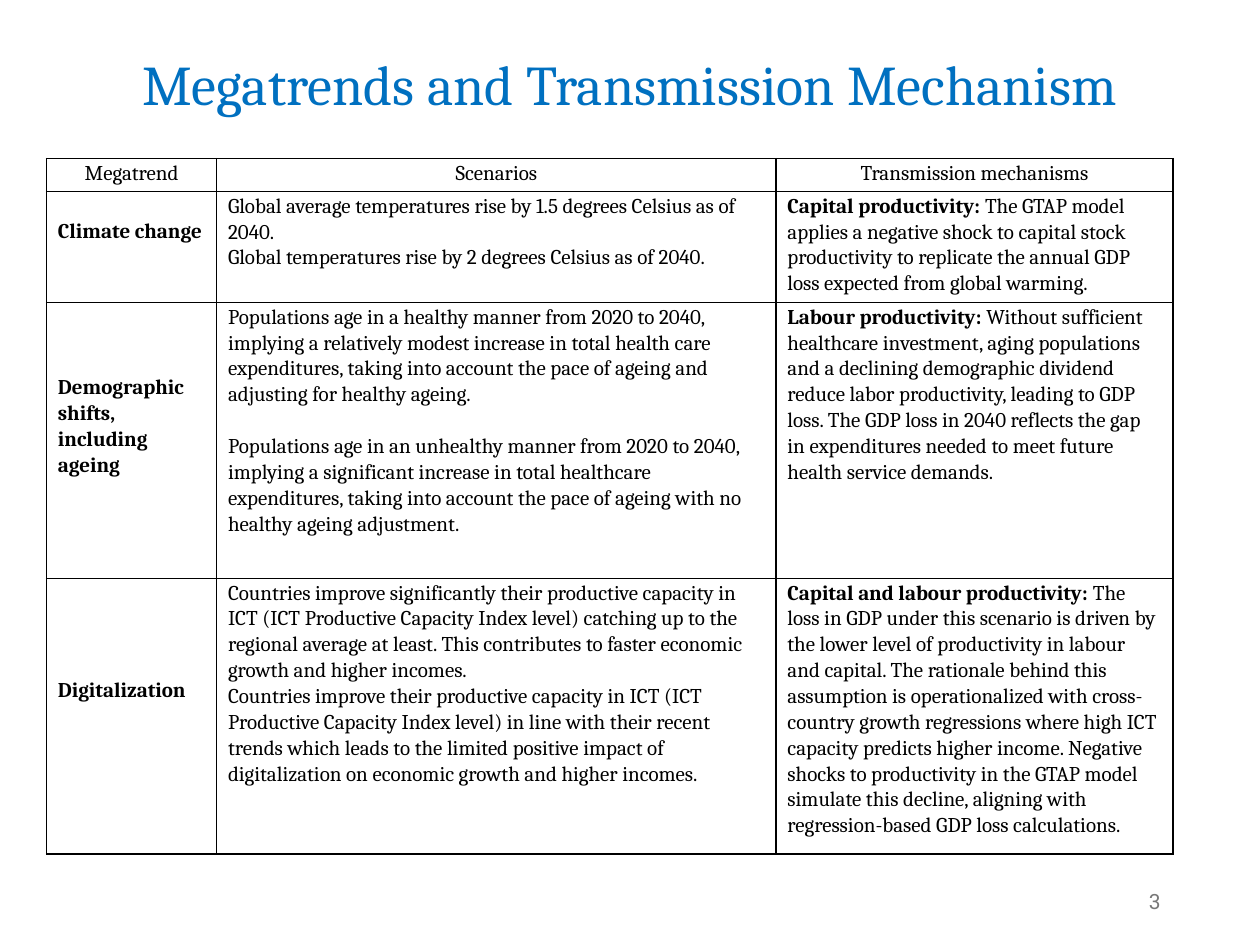
import pptx
import pptx.util
import pptx.dml.color
import pptx.enum.text
import pptx.oxml
import pptx.oxml.ns

Pt = pptx.util.Pt
align = pptx.enum.text.PP_ALIGN
anchor = pptx.enum.text.MSO_ANCHOR
unit = pptx.util.Inches(0.01)


def style(para, face, size, tint, side, lead):
    para.font.name = face
    para.font.size = Pt(size)
    para.font.color.rgb = pptx.dml.color.RGBColor.from_string(tint)
    para.alignment = side
    para.line_spacing = lead


deck = pptx.Presentation()
deck.slide_width = 1000 * unit
deck.slide_height = 750 * unit
slide = deck.slides.add_slide(deck.slide_layouts[6])

labels = [
    ("Megatrends and Transmission Mechanism", (69, 40, 862, 145),
     "Cambria", 32, "0070C0", align.CENTER, 0.9, anchor.TOP, 0),
    ("3", (706, 695, 225, 40),
     "Roboto", 12, "797979", align.RIGHT, 1.0, anchor.MIDDLE, 6),
]
for text, place, face, size, tint, side, lead, hold, after in labels:
    frame = slide.shapes.add_textbox(*[n * unit for n in place]).text_frame
    frame.word_wrap = True
    frame.vertical_anchor = hold
    para = frame.paragraphs[0]
    para.text = text
    para.space_after = Pt(after)
    style(para, face, size, tint, side, lead)

cols = [135, 444, 315]
rows = [26, 88, 219, 219]
drops = [1, 21, 57, 78]
gaps = [0, 0, 15, 0]
data = [
    ("Megatrend", ["Scenarios"], ("", "Transmission mechanisms")),
    ("Climate change",
     ["Global average temperatures rise by 1.5 degrees Celsius as of 2040.",
      "Global temperatures rise by 2 degrees Celsius as of 2040."],
     ("Capital productivity:",
      " The GTAP model applies a negative shock to capital stock productivity "
      "to replicate the annual GDP loss expected from global warming.")),
    ("Demographic shifts, including ageing",
     ["Populations age in a healthy manner from 2020 to 2040, implying a "
      "relatively modest increase in total health care expenditures, taking "
      "into account the pace of ageing and adjusting for healthy ageing.",
      "Populations age in an unhealthy manner from 2020 to 2040, implying a "
      "significant increase in total healthcare expenditures, taking into "
      "account the pace of ageing with no healthy ageing adjustment."],
     ("Labour productivity:",
      " Without sufficient healthcare investment, aging populations and a "
      "declining demographic dividend reduce labor productivity, leading to "
      "GDP loss. The GDP loss in 2040 reflects the gap in expenditures needed "
      "to meet future health service demands.")),
    ("Digitalization",
     ["Countries improve significantly their productive capacity in ICT (ICT "
      "Productive Capacity Index level) catching up to the regional average at "
      "least. This contributes to faster economic growth and higher incomes.",
      "Countries improve their productive capacity in ICT (ICT Productive "
      "Capacity Index level) in line with their recent trends which leads to "
      "the limited positive impact of digitalization on economic growth and "
      "higher incomes."],
     ("Capital and labour productivity:",
      " The loss in GDP under this scenario is driven by the lower level of "
      "productivity in labour and capital. The rationale behind this "
      "assumption is operationalized with cross-country growth regressions "
      "where high ICT capacity predicts higher income. Negative shocks to "
      "productivity in the GTAP model simulate this decline, aligning with "
      "regression-based GDP loss calculations.")),
]

grid = slide.shapes.add_table(
    len(rows), len(cols), 37 * unit, 126 * unit,
    sum(cols) * unit, sum(rows) * unit).table
grid.first_row = False
grid.horz_banding = False
for col, wide in zip(grid.columns, cols):
    col.width = wide * unit
for row, high in zip(grid.rows, rows):
    row.height = high * unit

for r, (trend, cases, effect) in enumerate(data):
    parts = [[("", trend)], [("", case) for case in cases], [effect]]
    if r:
        parts[0] = [(trend, "")]
    for c, items in enumerate(parts):
        cell = grid.cell(r, c)
        cell.margin_left = cell.margin_right = 9 * unit
        cell.margin_top = (drops[r] if c == 0 else 1) * unit
        cell.margin_bottom = 0
        for i, item in enumerate(items):
            frame = cell.text_frame
            para = frame.add_paragraph() if i else frame.paragraphs[0]
            for text, bold in zip(item, (True, False)):
                if text:
                    run = para.add_run()
                    run.text = text
                    run.font.bold = bold
            if i:
                para.space_before = Pt(gaps[r])
            style(para, "Cambria", 12, "000000",
                  align.LEFT if r else align.CENTER, 1.07)
        props = cell._tc.get_or_add_tcPr()
        for edge in ("lnL", "lnR", "lnT", "lnB"):
            props.append(pptx.oxml.parse_xml(
                f'<a:{edge} {pptx.oxml.ns.nsdecls("a")} w="12700"><a:solidFill>'
                f'<a:srgbClr val="000000"/></a:solidFill></a:{edge}>'))
        cell.fill.background()

deck.save("out.pptx")
